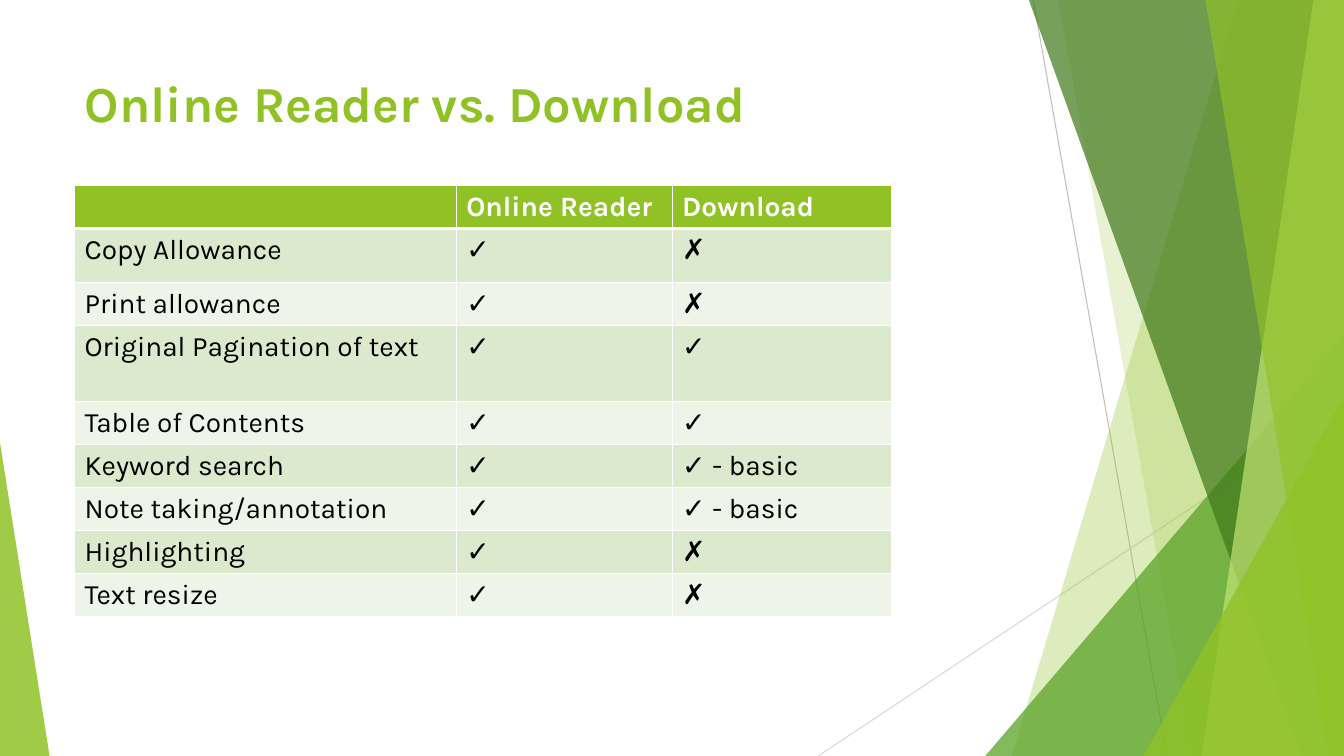
from dataclasses import dataclass

from lxml import etree
from pptx import Presentation
from pptx import util as u
from pptx.dml.color import RGBColor
from pptx.enum import shapes, text
from pptx.oxml import ns


@dataclass(frozen=True)
class Theme:
    font: str = "Karla"
    title_size: int = 36
    table_size: int = 20
    accent: str = "90C226"
    green: str = "54A021"
    dark: str = "3F7819"
    light: str = "C0E474"
    band_odd: str = "DBE9CD"
    band_even: str = "EEF4E8"
    white: str = "FFFFFF"
    black: str = "000000"
    gray: str = "BFBFBF"
    pale_gray: str = "D9D9D9"


@dataclass(frozen=True)
class Box:
    left: float
    top: float
    width: float
    height: float

    def lengths(self):
        return [u.Cm(value) for value in (self.left, self.top, self.width, self.height)]


THEME = Theme()
PAGE = Box(0, 0, 33.87, 19.05)
TITLE_BOX = Box(1.88, 1.7, 23.88, 3.66)
TABLE_BOX = Box(1.88, 4.68, 20.58, 10.87)
COLUMN_WIDTHS = [9.62, 5.44, 5.52]
ROW_HEIGHT = 1.08
TALL_ROWS = {1: 1.36, 3: 1.92}
YES, NO, BASIC = "✓", "✗", "✓ - basic"
ROWS = [
    ("", "Online Reader", "Download"),
    ("Copy Allowance", YES, NO),
    ("Print allowance", YES, NO),
    ("Original Pagination of text", YES, YES),
    ("Table of Contents", YES, YES),
    ("Keyword search", YES, BASIC),
    ("Note taking/annotation", YES, BASIC),
    ("Highlighting", YES, NO),
    ("Text resize", YES, NO),
]


def apply_format(target, values):
    for name, value in values.items():
        setattr(target, name, value)


def write_text(frame, words, size, color, bold):
    paragraph = frame.paragraphs[0]
    paragraph.alignment = text.PP_ALIGN.LEFT
    run = paragraph.add_run()
    run.text = words
    apply_format(run.font, {"name": THEME.font, "size": u.Pt(size), "bold": bold})
    run.font.color.rgb = RGBColor.from_string(color)


def paint(shape, color, opacity):
    shape.shadow.inherit = False
    shape.fill.solid()
    shape.fill.fore_color.rgb = RGBColor.from_string(color)
    shape.line.fill.background()
    color_element = shape.fill._xPr.find(".//" + ns.qn("a:srgbClr"))
    etree.SubElement(color_element, ns.qn("a:alpha"), val=str(opacity * 1000))


def add_line(slide, start, end, color):
    points = [u.Cm(value) for value in (*start, *end)]
    line = slide.shapes.add_connector(shapes.MSO_CONNECTOR.STRAIGHT, *points)
    line.line.width = u.Pt(0.75)
    line.line.color.rgb = RGBColor.from_string(color)
    etree.SubElement(line._element.spPr, ns.qn("a:effectLst"))


def add_facet(slide, box, top_x, bottom_x, color, opacity):
    right, bottom = box.left + box.width, box.top + box.height
    corners = [(top_x, box.top), (right, box.top), (right, bottom), (bottom_x, bottom)]
    points = [(u.Cm(x), u.Cm(y)) for x, y in corners]
    builder = slide.shapes.build_freeform(*points[0])
    builder.add_line_segments(points[1:], close=True)
    paint(builder.convert_to_shape(), color, opacity)


def add_corner(slide, box, peak, color, opacity):
    triangle = slide.shapes.add_shape(
        shapes.MSO_SHAPE.ISOSCELES_TRIANGLE, *box.lengths()
    )
    triangle.adjustments[0] = peak
    paint(triangle, color, opacity)


def right_corner(page, width, height):
    return Box(page.left + page.width - width, page.top + page.height - height, width, height)


def add_decoration(slide, page):
    bottom = page.top + page.height
    add_line(slide, (26.04, page.top), (29.41, bottom), THEME.gray)
    add_line(slide, (page.left + page.width, 10.24), (20.62, bottom), THEME.pale_gray)
    add_facet(slide, page, 31.19, 25.5, THEME.accent, 30)
    add_facet(slide, page, 26.67, 30.05, THEME.accent, 20)
    add_corner(slide, right_corner(page, 9.04, 10.58), 1, THEME.green, 72)
    add_facet(slide, page, 25.93, 32.79, THEME.dark, 70)
    add_facet(slide, page, 33.1, 30.28, THEME.light, 70)
    add_facet(slide, page, 30.38, 33.48, THEME.accent, 65)
    add_corner(slide, right_corner(page, 5.05, 9.06), 1, THEME.accent, 80)
    add_corner(slide, Box(page.left, bottom - 7.9, 1.25, 7.9), 0, THEME.accent, 85)


def add_title(slide, box, words):
    title = slide.shapes.title
    apply_format(title, dict(zip(("left", "top", "width", "height"), box.lengths())))
    apply_format(title.text_frame, {
        "word_wrap": True,
        "auto_size": text.MSO_AUTO_SIZE.NONE,
        "vertical_anchor": text.MSO_ANCHOR.TOP,
    })
    write_text(title.text_frame, words, THEME.title_size, THEME.accent, True)


def add_borders(cell, widths):
    properties = cell._tc.get_or_add_tcPr()
    for index, (side, width) in enumerate(widths.items()):
        border = etree.Element(ns.qn("a:ln" + side), w=str(u.Pt(width)))
        fill = etree.SubElement(border, ns.qn("a:solidFill"))
        etree.SubElement(fill, ns.qn("a:srgbClr"), val=THEME.white)
        properties.insert(index, border)


def add_comparison(slide, box, rows):
    frame = slide.shapes.add_table(len(rows), len(rows[0]), *box.lengths())
    table = frame.table
    for column, width in zip(table.columns, COLUMN_WIDTHS):
        column.width = u.Cm(width)
    for row_index, words_in_row in enumerate(rows):
        table.rows[row_index].height = u.Cm(TALL_ROWS.get(row_index, ROW_HEIGHT))
        header = row_index == 0
        band = THEME.band_odd if row_index % 2 else THEME.band_even
        for column_index, words in enumerate(words_in_row):
            cell = table.cell(row_index, column_index)
            cell.fill.solid()
            cell.fill.fore_color.rgb = RGBColor.from_string(THEME.accent if header else band)
            add_borders(cell, {
                "L": 1, "R": 1, "T": 3 if row_index == 1 else 1, "B": 3 if header else 1,
            })
            if words:
                color = THEME.white if header else THEME.black
                write_text(cell.text_frame, words, THEME.table_size, color, header)


def main():
    presentation = Presentation()
    apply_format(presentation, {
        "slide_width": u.Cm(PAGE.width), "slide_height": u.Cm(PAGE.height),
    })
    slide = presentation.slides.add_slide(presentation.slide_layouts[5])
    add_decoration(slide, PAGE)
    add_title(slide, TITLE_BOX, "Online Reader vs. Download")
    add_comparison(slide, TABLE_BOX, ROWS)
    presentation.save("out.pptx")


if __name__ == "__main__":
    main()
